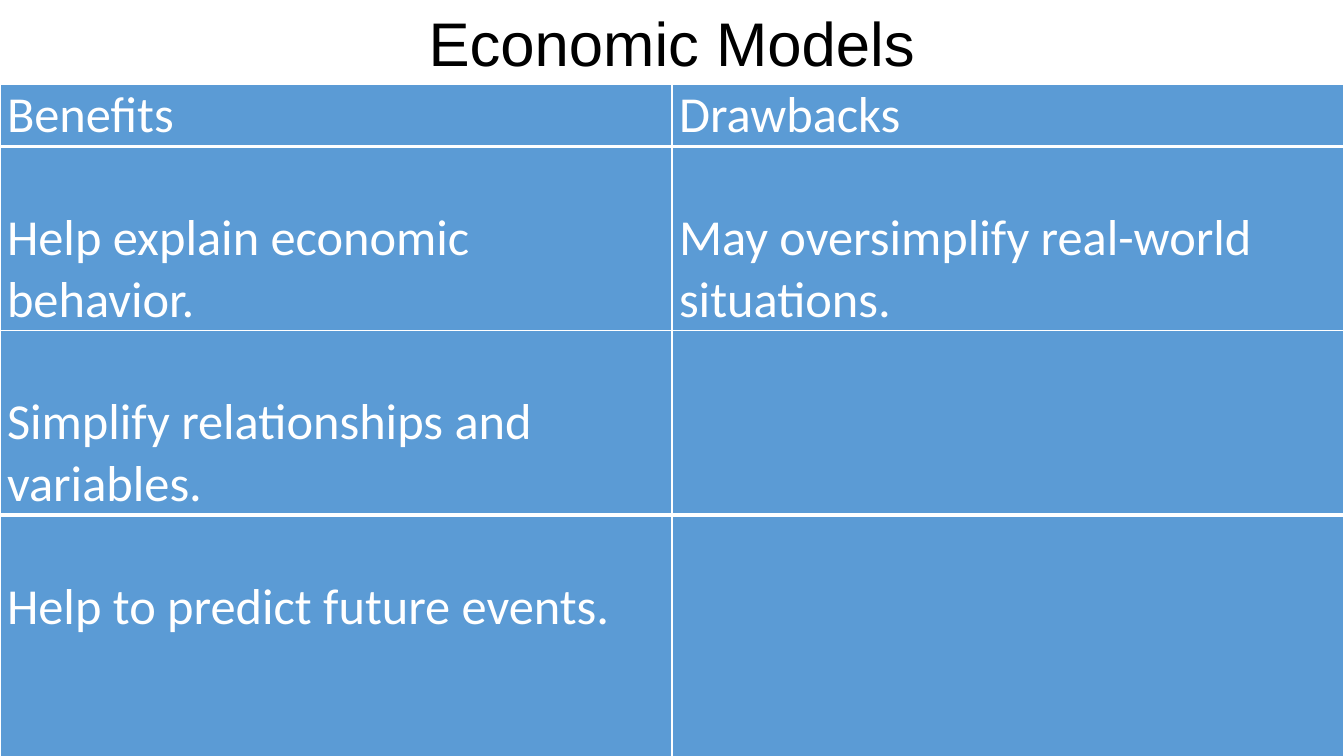
import lxml.etree
import pptx
import pptx.dml.color
import pptx.enum.text
import pptx.oxml.ns
import pptx.util

COLORS = {"heading": "000000", "cell": "5B9BD5", "text": "FFFFFF", "border": "FFFFFF"}
SLIDE_WIDTH, SLIDE_HEIGHT = 13.33, 7.5
TITLE_SHARE = 0.112
LINE_SHARE = (1 - TITLE_SHARE) / 11

COMPARISON = [
    ("Benefits", "Drawbacks"),
    ("Help explain economic behavior.", "May oversimplify real-world situations."),
    ("Simplify relationships and variables.", ""),
    ("Help to predict future events.", ""),
]
ROW_LINES = [1, 3, 3, 4]
RULE_WIDTHS = [1, 3, 1, 3, 1]


def rgb(name):
    return pptx.dml.color.RGBColor.from_string(COLORS[name])


def write(frame, text, *, size, font, color, align=pptx.enum.text.PP_ALIGN.LEFT):
    paragraph = frame.paragraphs[0]
    paragraph.alignment = align
    run = paragraph.add_run()
    run.text = text
    run.font.size = pptx.util.Pt(size)
    run.font.name = font
    run.font.color.rgb = rgb(color)


class ComparisonSlide:
    """Holds the deck, its style and the current slide; lengths are shares of the slide."""

    def __init__(self):
        self.deck = pptx.Presentation()
        self.deck.slide_width = pptx.util.Inches(SLIDE_WIDTH)
        self.deck.slide_height = pptx.util.Inches(SLIDE_HEIGHT)
        self.slide = self.deck.slides.add_slide(self.deck.slide_layouts[6])
        self.body = {"size": 36, "font": "Calibri", "color": "text"}
        self.heading = {"size": 44, "font": "Arial", "color": "heading"}

    def x(self, share):
        return round(self.deck.slide_width * share)

    def y(self, share):
        return round(self.deck.slide_height * share)

    def add_title(self, text, left, top, width, height):
        title = self.slide.shapes.add_textbox(
            self.x(left), self.y(top), self.x(width), self.y(height))
        frame = title.text_frame
        frame.word_wrap = False
        frame.vertical_anchor = pptx.enum.text.MSO_ANCHOR.MIDDLE
        write(frame, text, align=pptx.enum.text.PP_ALIGN.CENTER, **self.heading)

    def add_table(self, rows, row_lines, rule_widths, top):
        table = self.slide.shapes.add_table(
            len(rows), len(rows[0]), 0, self.y(top),
            self.x(1), self.y(1 - top)).table
        for row_index, entries in enumerate(rows):
            table.rows[row_index].height = self.y(row_lines[row_index] * LINE_SHARE)
            above, below = rule_widths[row_index:row_index + 2]
            for column, text in enumerate(entries):
                cell = table.cell(row_index, column)
                self.style_cell(cell, above, below, gap=0 if row_index == 0 else LINE_SHARE)
                if text:
                    write(cell.text_frame, text, **self.body)

    def style_cell(self, cell, above, below, gap):
        cell.margin_left = cell.margin_right = pptx.util.Inches(0.07)
        cell.margin_top, cell.margin_bottom = self.y(gap), 0
        cell.fill.solid()
        cell.fill.fore_color.rgb = rgb("cell")
        properties = cell._tc.get_or_add_tcPr()
        qn = pptx.oxml.ns.qn
        edges = {"a:lnL": 1, "a:lnR": 1, "a:lnT": above, "a:lnB": below}
        for position, (edge, width) in enumerate(edges.items()):
            line = lxml.etree.Element(qn(edge), w=str(pptx.util.Pt(width)))
            fill = lxml.etree.SubElement(line, qn("a:solidFill"))
            lxml.etree.SubElement(fill, qn("a:srgbClr"), val=COLORS["border"])
            properties.insert(position, line)


def main():
    page = ComparisonSlide()
    page.add_table(COMPARISON, ROW_LINES, RULE_WIDTHS, top=TITLE_SHARE)
    page.add_title("Economic Models", left=0.31, top=0, width=0.38, height=TITLE_SHARE)
    page.deck.save("out.pptx")


if __name__ == "__main__":
    main()
